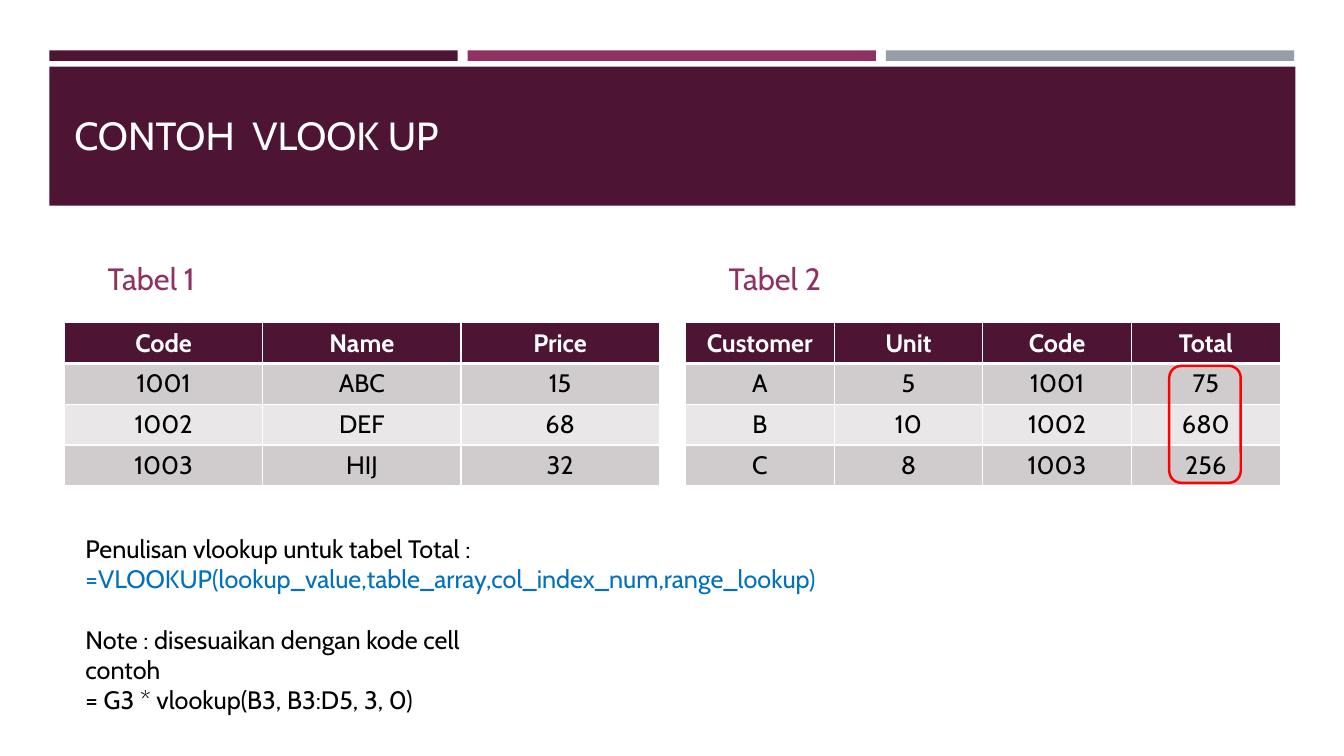
from dataclasses import dataclass

from lxml.etree import SubElement
from pptx import Presentation
from pptx.dml.color import RGBColor
from pptx.enum.shapes import MSO_SHAPE as Preset
from pptx.enum.text import MSO_ANCHOR as Anchor, PP_ALIGN as Align
from pptx.oxml.ns import qn
from pptx.slide import Slide
from pptx.table import _Cell as Cell
from pptx.text.text import _Paragraph as Paragraph
from pptx.util import Inches, Pt

FONT = "Cabin"
WIDTH, HEIGHT = Inches(13.333), Inches(7.5)
COLORS = {
    "plum": "4D1434",
    "berry": "903163",
    "steel": "969FA7",
    "white": "FFFFFF",
    "black": "000000",
    "blue": "0070C0",
    "red": "FF0000",
    "odd_row": "D0CCCE",
    "even_row": "E9E7E8",
}


@dataclass(frozen=True)
class Area:
    """Percentages of the slide's width and height."""

    left: float
    top: float
    width: float
    height: float

    def emu(self) -> tuple[int, int, int, int]:
        return (
            int(WIDTH * self.left / 100),
            int(HEIGHT * self.top / 100),
            int(WIDTH * self.width / 100),
            int(HEIGHT * self.height / 100),
        )


@dataclass(frozen=True)
class Line:
    text: str
    size: float = 18
    color: str = "black"
    before: float = 0


@dataclass(frozen=True)
class Panel:
    heading: str
    left: float
    rows: list[list[str]]


MARGIN = 3.68
BAR_WIDTH, BAR_STEP = 30.38, 31.42 - 0.3
BARS = ["plum", "berry", "steel"]
BANNER = Area(MARGIN, 8.8, 92.7, 18.4)
TITLE = Area(4.8, 10.67, 90.45, 14.4)
TOTAL_RING = Area(87, 48.4, 5.32, 15.47)
EXPLANATION = Area(5.62, 69.87, 64.2, 25.6)
HEADING_INDENT = 2.48
TABLE_WIDTH, ROW_HEIGHT = 44.25, 5.4

PANELS = [
    Panel("Tabel 1", 4.8, [
        ["Code", "Name", "Price"],
        ["1001", "ABC", "15"],
        ["1002", "DEF", "68"],
        ["1003", "HIJ", "32"],
    ]),
    Panel("Tabel 2", 51, [
        ["Customer", "Unit", "Code", "Total"],
        ["A", "5", "1001", "75"],
        ["B", "10", "1002", "680"],
        ["C", "8", "1003", "256"],
    ]),
]
EXPLANATION_LINES = [
    Line("Penulisan vlookup untuk tabel Total :"),
    Line("=VLOOKUP(lookup_value,table_array,col_index_num,range_lookup)", color="blue"),
    Line("Note : disesuaikan dengan kode cell", before=21.7),
    Line("contoh"),
    Line("= G3 * vlookup(B3, B3:D5, 3, 0)"),
]


def rgb(color: str) -> RGBColor:
    return RGBColor.from_string(COLORS[color])


def style(paragraph: Paragraph, size: float, color: str, bold: bool = False) -> None:
    for run in paragraph.runs:
        run.font.name = FONT
        run.font.size = Pt(size)
        run.font.bold = bold
        run.font.color.rgb = rgb(color)


def add_band(slide: Slide, area: Area, color: str) -> None:
    band = slide.shapes.add_shape(Preset.RECTANGLE, *area.emu())
    band.shadow.inherit = False
    band.fill.solid()
    band.fill.fore_color.rgb = rgb(color)
    band.line.fill.background()


def add_ring(slide: Slide, area: Area) -> None:
    ring = slide.shapes.add_shape(Preset.ROUNDED_RECTANGLE, *area.emu())
    ring.shadow.inherit = False
    ring.fill.background()
    ring.line.color.rgb = rgb("red")
    ring.line.width = Pt(1.75)


def add_lines(slide: Slide, area: Area, lines: list[Line], anchor: Anchor) -> None:
    frame = slide.shapes.add_textbox(*area.emu()).text_frame
    frame.word_wrap = True
    frame.vertical_anchor = anchor
    frame.text = "\n".join(line.text for line in lines)
    for paragraph, line in zip(frame.paragraphs, lines):
        if line.before:
            paragraph.space_before = Pt(line.before)
        style(paragraph, line.size, line.color)


def add_borders(cell: Cell, row: int) -> None:
    thickness = {
        "lnL": 1,
        "lnR": 1,
        "lnT": 3 if row == 1 else 1,
        "lnB": 3 if row == 0 else 1,
    }
    properties = cell._tc.get_or_add_tcPr()
    for side, points in thickness.items():
        border = SubElement(properties, qn(f"a:{side}"), w=str(Pt(points)))
        fill = SubElement(border, qn("a:solidFill"))
        SubElement(fill, qn("a:srgbClr"), val=COLORS["white"])


def fill_cell(cell: Cell, text: str, row: int) -> None:
    header = row == 0
    cell.text = text
    paragraph = cell.text_frame.paragraphs[0]
    paragraph.alignment = Align.CENTER
    style(paragraph, 18, "white" if header else "black", header)
    add_borders(cell, row)
    cell.fill.solid()
    cell.fill.fore_color.rgb = rgb(
        "plum" if header else "odd_row" if row % 2 else "even_row"
    )


def add_panel(slide: Slide, panel: Panel) -> None:
    heading = Area(panel.left + HEADING_INDENT, 32.8, 41.7, 8)
    add_lines(slide, heading, [Line(panel.heading, 22, "berry")], Anchor.MIDDLE)
    area = Area(panel.left, 42.67, TABLE_WIDTH, ROW_HEIGHT * len(panel.rows))
    table = slide.shapes.add_table(
        len(panel.rows), len(panel.rows[0]), *area.emu()
    ).table
    for row, texts in enumerate(panel.rows):
        for column, text in enumerate(texts):
            fill_cell(table.cell(row, column), text, row)


def main() -> None:
    deck = Presentation()
    deck.slide_width, deck.slide_height = WIDTH, HEIGHT
    slide = deck.slides.add_slide(deck.slide_layouts[6])
    for index, color in enumerate(BARS):
        add_band(slide, Area(MARGIN + index * BAR_STEP, 6.67, BAR_WIDTH, 1.4), color)
    add_band(slide, BANNER, "plum")
    add_lines(slide, TITLE, [Line("CONTOH  VLOOK UP", 28, "white")], Anchor.MIDDLE)
    for panel in PANELS:
        add_panel(slide, panel)
    add_ring(slide, TOTAL_RING)
    add_lines(slide, EXPLANATION, EXPLANATION_LINES, Anchor.TOP)
    deck.save("out.pptx")


if __name__ == "__main__":
    main()
